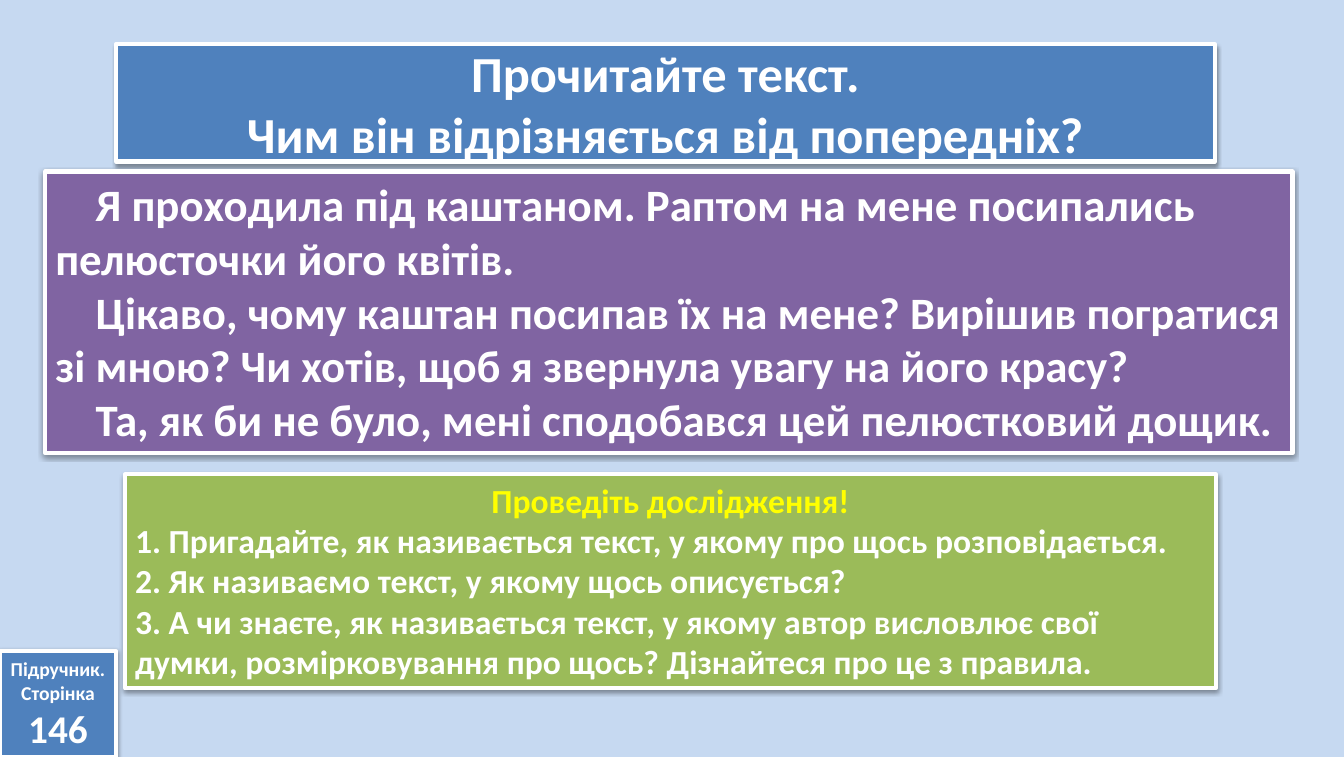
from lxml import etree
from pptx import Presentation
from pptx.dml.color import RGBColor
from pptx.enum.shapes import MSO_SHAPE
from pptx.enum.text import MSO_ANCHOR, PP_ALIGN
from pptx.oxml import parse_xml
from pptx.oxml.ns import nsdecls, qn
from pptx.util import Inches, Pt

FONT = "Calibri"
WHITE, YELLOW = "FFFFFF", "FFFF00"
BLUE, PURPLE, GREEN, SKY = "4F81BD", "8064A2", "9BBB59", "C6D9F1"

STORY = [
    "Я проходила під каштаном. Раптом на мене посипались пелюсточки його квітів.",
    "Цікаво, чому каштан посипав їх на мене? Вирішив погратися зі мною? "
    "Чи хотів, щоб я звернула увагу на його красу?",
    "Та, як би не було, мені сподобався цей пелюстковий дощик.",
]
QUESTIONS = [
    "1. Пригадайте, як називається текст, у якому про щось розповідається.",
    "2. Як називаємо текст, у якому щось описується?",
    "3. А чи знаєте, як називається текст, у якому автор висловлює свої думки, "
    "розмірковування про щось? Дізнайтеся про це з правила.",
]


def color(value):
    return RGBColor.from_string(value)


def add_soft_shadow(shape):
    shape.shadow.inherit = False
    effects = shape._element.spPr.find(qn("a:effectLst"))
    shadow = parse_xml(
        f'<a:outerShdw {nsdecls("a")} blurRad="{Pt(3.1)}" dist="{Pt(1.6)}" '
        'dir="5400000" rotWithShape="0"/>')
    black = etree.SubElement(shadow, qn("a:srgbClr"), val="000000")
    etree.SubElement(black, qn("a:alpha"), val="38000")
    effects.append(shadow)


def add_panel(page, box, fill, anchor=MSO_ANCHOR.TOP):
    """Add a white-framed panel and return its empty text frame."""
    panel = page.shapes.add_shape(MSO_SHAPE.RECTANGLE, *map(Inches, box))
    panel.fill.solid()
    panel.fill.fore_color.rgb = color(fill)
    panel.line.color.rgb = color(WHITE)
    panel.line.width = Pt(3)
    add_soft_shadow(panel)
    frame = panel.text_frame
    frame.word_wrap = True
    frame.vertical_anchor = anchor
    return frame


def add_text(frame, text, size, ink=WHITE, align=PP_ALIGN.LEFT, indent=0):
    """Write one paragraph, filling the frame's first one when it is empty."""
    para = frame.paragraphs[0] if not frame.text else frame.add_paragraph()
    para.alignment = align
    if indent:
        para._p.get_or_add_pPr().set("indent", str(Inches(indent)))
    span = para.add_run()
    span.text = text
    span.font.name = FONT
    span.font.size = Pt(size)
    span.font.bold = True
    span.font.color.rgb = color(ink)


def add_title(page, box):
    frame = add_panel(page, box, BLUE, MSO_ANCHOR.MIDDLE)
    for line in ("Прочитайте текст.", "Чим він відрізняється від попередніх?"):
        add_text(frame, line, 36, align=PP_ALIGN.CENTER)


def add_story(page, box):
    frame = add_panel(page, box, PURPLE)
    for passage in STORY:
        add_text(frame, passage, 32, indent=0.4)


def add_page_reference(page, box):
    frame = add_panel(page, box, BLUE, MSO_ANCHOR.MIDDLE)
    for line, size in (("Підручник.", 14), ("Сторінка", 14), ("146", 28)):
        add_text(frame, line, size, align=PP_ALIGN.CENTER)


def add_research(page, box):
    frame = add_panel(page, box, GREEN)
    add_text(frame, "Проведіть дослідження!", 24, ink=YELLOW, align=PP_ALIGN.CENTER)
    for question in QUESTIONS:
        add_text(frame, question, 24)


def main():
    deck = Presentation()
    deck.slide_width, deck.slide_height = Inches(13.32), Inches(7.5)
    page = deck.slides.add_slide(deck.slide_layouts[6])
    page.background.fill.solid()
    page.background.fill.fore_color.rgb = color(SKY)
    add_title(page, (1.15, 0.44, 10.89, 1.16))
    add_story(page, (0.45, 1.7, 12.36, 2.79))
    add_page_reference(page, (0, 6.45, 1.15, 1.05))
    add_research(page, (1.24, 4.7, 10.81, 2.12))
    deck.save("out.pptx")


if __name__ == "__main__":
    main()
